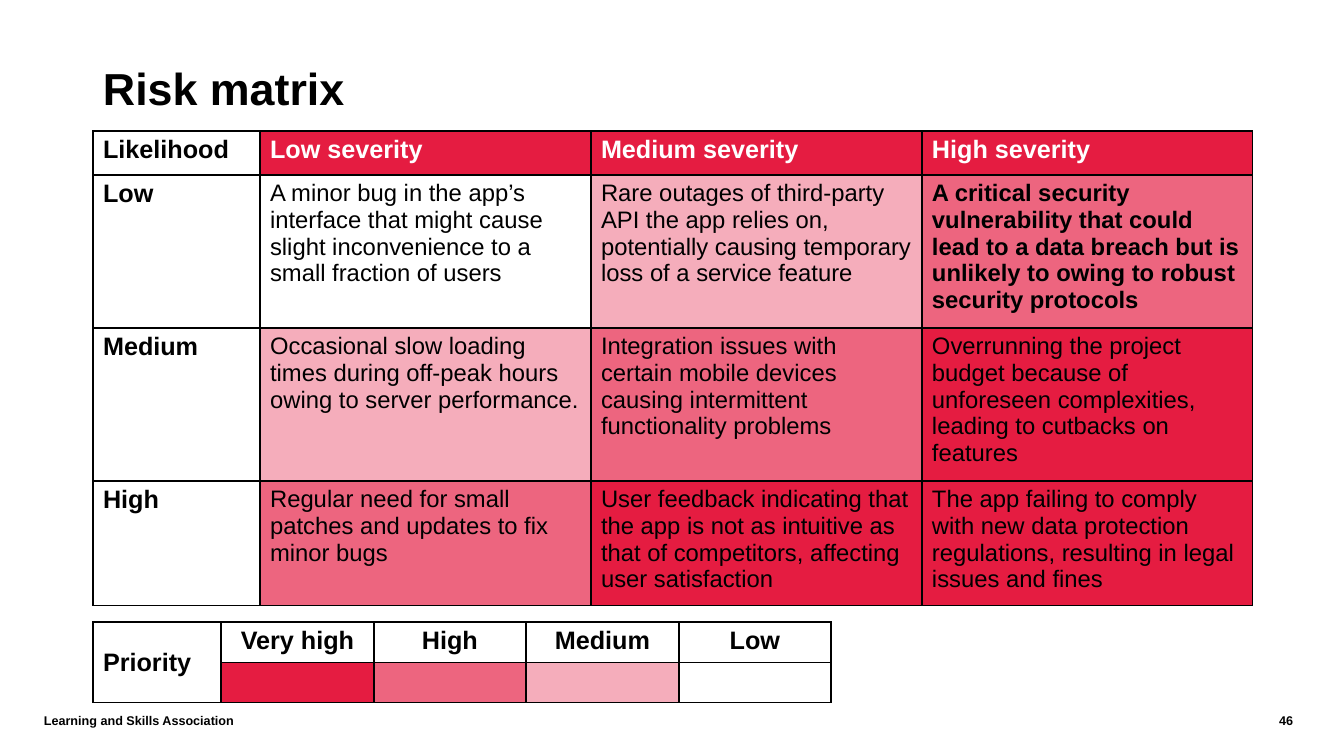
from dataclasses import dataclass
from lxml.etree import SubElement
from pptx import Presentation
from pptx.dml.color import RGBColor
from pptx.enum.text import MSO_ANCHOR, PP_ALIGN
from pptx.oxml.ns import qn
from pptx.util import Emu, Pt


@dataclass(frozen=True)
class Theme:
    font: str = "Arial"
    black: str = "000000"
    white: str = "FFFFFF"
    red: str = "E51C41"
    rose: str = "ED657F"
    pink: str = "F5ADBB"
    title: int = 32
    label: int = 18
    body: int = 17
    footer: int = 9


T = Theme()
LEFT = 93
PRIORITIES = {"Very high": T.red, "High": T.rose, "Medium": T.pink, "Low": None}
SEVERITIES = ["Low severity", "Medium severity", "High severity"]
RISKS = {
    "Low": [
        "A minor bug in the app’s interface that might cause slight "
        "inconvenience to a small fraction of users",
        "Rare outages of third-party API the app relies on, potentially "
        "causing temporary loss of a service feature",
        "A critical security vulnerability that could lead to a data breach "
        "but is unlikely to owing to robust security protocols",
    ],
    "Medium": [
        "Occasional slow loading times during off-peak hours owing to server "
        "performance.",
        "Integration issues with certain mobile devices causing intermittent "
        "functionality problems",
        "Overrunning the project budget because of unforeseen complexities, "
        "leading to cutbacks on features",
    ],
    "High": [
        "Regular need for small patches and updates to fix minor bugs",
        "User feedback indicating that the app is not as intuitive as that of "
        "competitors, affecting user satisfaction",
        "The app failing to comply with new data protection regulations, "
        "resulting in legal issues and fines",
    ],
}
# Priority colour rises with likelihood plus severity
RISK_FILLS = [None, T.pink, T.rose, T.red, T.red]


def px(n):
    return Emu(round(n * 914400 / 100.8))


def add_run(p, text, size, color=T.black, bold=True):
    r = p.add_run()
    r.text = text
    r.font.name = T.font
    r.font.size = Pt(size)
    r.font.bold = bold
    r.font.color.rgb = RGBColor.from_string(color)


def add_text(s, box, text, size, align=PP_ALIGN.LEFT, anchor=MSO_ANCHOR.MIDDLE):
    tf = s.shapes.add_textbox(*map(px, box)).text_frame
    tf.word_wrap = True
    tf.vertical_anchor = anchor
    p = tf.paragraphs[0]
    p.alignment = align
    add_run(p, text, size)
    return tf


def add_borders(cell):
    tc_pr = cell._tc.get_or_add_tcPr()
    for i, side in enumerate(("lnL", "lnR", "lnT", "lnB")):
        ln = SubElement(tc_pr, qn(f"a:{side}"), w=str(Pt(1)))
        fill = SubElement(ln, qn("a:solidFill"))
        SubElement(fill, qn("a:srgbClr"), val=T.black)
        tc_pr.insert(i, ln)


def add_grid(s, top, widths, heights):
    frame = s.shapes.add_table(len(heights), len(widths), px(LEFT), px(top),
                               px(sum(widths)), px(sum(heights)))
    table = frame.table
    table.first_row = table.horz_banding = False
    for column, width in zip(table.columns, widths):
        column.width = px(width)
    for row, height in zip(table.rows, heights):
        row.height = px(height)
    for cell in table.iter_cells():
        cell.fill.background()
        add_borders(cell)
    return table


def set_cell(cell, text="", size=T.label, color=T.black, bold=True, fill=None,
             align=PP_ALIGN.LEFT):
    if fill:
        cell.fill.solid()
        cell.fill.fore_color.rgb = RGBColor.from_string(fill)
    p = cell.text_frame.paragraphs[0]
    p.alignment = align
    if text:
        add_run(p, text, size, color, bold)


def add_risk_matrix(s):
    table = add_grid(s, 131, [167, 331, 331, 331], [44, 144, 143, 117])
    set_cell(table.cell(0, 0), "Likelihood")
    for col, severity in enumerate(SEVERITIES, 1):
        set_cell(table.cell(0, col), severity, color=T.white, fill=T.red)
    for i, (likelihood, risks) in enumerate(RISKS.items()):
        set_cell(table.cell(i + 1, 0), likelihood)
        for j, risk in enumerate(risks):
            set_cell(table.cell(i + 1, j + 1), risk, T.body,
                     bold=(i, j) == (0, 2), fill=RISK_FILLS[i + j])


def add_priority_key(s):
    table = add_grid(s, 622, [128] + [153, 152] * 2, [38, 39])
    heading = table.cell(0, 0)
    heading.merge(table.cell(1, 0))
    heading.vertical_anchor = MSO_ANCHOR.MIDDLE
    set_cell(heading, "Priority")
    for col, (name, fill) in enumerate(PRIORITIES.items(), 1):
        set_cell(table.cell(0, col), name, align=PP_ALIGN.CENTER)
        set_cell(table.cell(1, col), fill=fill)


def main():
    prs = Presentation()
    prs.slide_width, prs.slide_height = px(1344), px(756)
    s = prs.slides.add_slide(prs.slide_layouts[6])

    # Title
    tf = add_text(s, (LEFT, 40, 1159, 146), "Risk matrix", T.title,
                  anchor=MSO_ANCHOR.TOP)
    tf.margin_top = px(10)
    tf.paragraphs[0].line_spacing = 1.2

    # Matrix and its colour key
    add_risk_matrix(s)
    add_priority_key(s)

    # Footer and page number
    add_text(s, (34, 701, 1130, 40), "Learning and Skills Association", T.footer)
    add_text(s, (1169, 701, 134, 40), "46", T.footer, PP_ALIGN.RIGHT)

    prs.save("out.pptx")


if __name__ == "__main__":
    main()
